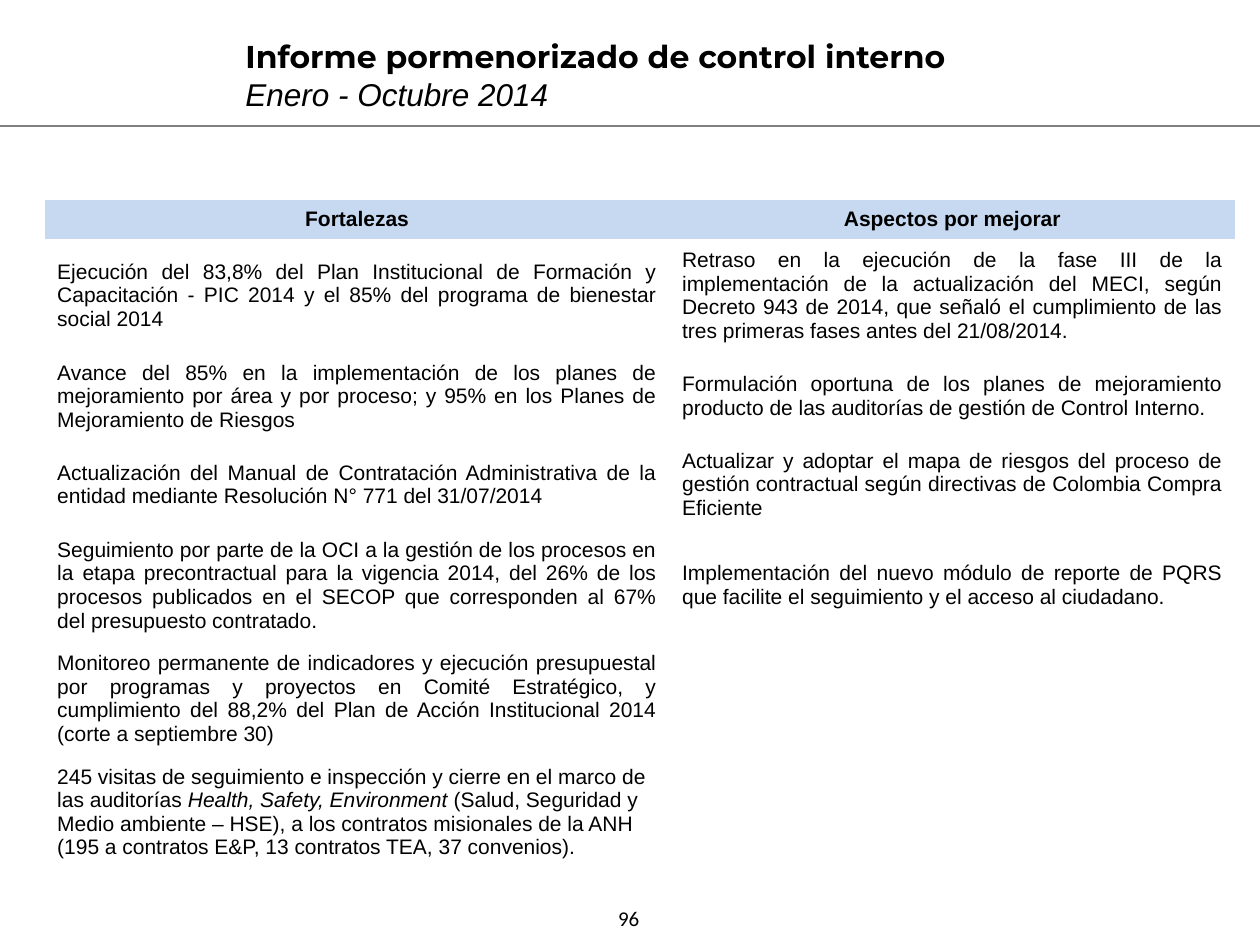
import pptx
import pptx.util
import pptx.dml.color
import pptx.enum.shapes
import pptx.enum.text
import pptx.oxml.ns
import lxml.etree

Pt = pptx.util.Pt
Align = pptx.enum.text.PP_ALIGN
Anchor = pptx.enum.text.MSO_ANCHOR

COLORS = {"text": "000000", "header": "C6D9F1", "rule": "808080"}
NO_GRID_STYLE = "{2D5ABB26-0587-4C30-8999-92F81FD0307C}"

HEADERS = ["Fortalezas", "Aspectos por mejorar"]
STRENGTHS = [
    "Ejecución del 83,8% del Plan Institucional de Formación y Capacitación - PIC 2014 y el 85% del programa de bienestar social 2014",
    "Avance del 85% en la implementación de los planes de mejoramiento por área y por proceso; y 95% en los Planes de Mejoramiento de Riesgos",
    "Actualización del Manual de Contratación Administrativa de la entidad mediante Resolución N° 771 del 31/07/2014",
    "Seguimiento por parte de la OCI a la gestión de los procesos en la etapa precontractual para la vigencia 2014, del 26% de los procesos publicados en el SECOP que corresponden al 67% del presupuesto contratado.",
    "Monitoreo permanente de indicadores y ejecución presupuestal por programas y proyectos en Comité Estratégico, y cumplimiento del 88,2% del Plan de Acción Institucional 2014 (corte a septiembre 30)",
]
IMPROVEMENTS = [
    "Retraso en la ejecución de la fase III de la implementación de la actualización del MECI, según Decreto 943 de 2014, que señaló el cumplimiento de las tres primeras fases antes del 21/08/2014.",
    "Formulación oportuna de los planes de mejoramiento producto de las auditorías de gestión de Control Interno.",
    "Actualizar y adoptar el mapa de riesgos del proceso de gestión contractual según directivas de Colombia Compra Eficiente",
    "Implementación del nuevo módulo de reporte de PQRS que facilite el seguimiento y el acceso al ciudadano.",
]
VISITS = [
    ("245 visitas de seguimiento e inspección y cierre en el marco de las auditorías ", False),
    ("Health, Safety, Environment ", True),
    ("(Salud, Seguridad y Medio ambiente – HSE), a los contratos misionales de la ANH (195 a contratos E&P, 13 contratos TEA, 37 convenios).", False),
]
COLUMN_WIDTHS = [357.1, 323.3]
ROW_HEIGHTS = [22.4, 64.8, 50.4, 50.4, 64.8, 64.8, 64.8]


def color(name):
    return pptx.dml.color.RGBColor.from_string(COLORS[name])


def write(para, text, font="Arial", size=12, bold=False, italic=False, align=Align.LEFT):
    para.alignment = align
    span = para.add_run()
    span.text = text
    span.font.name = font
    span.font.size = Pt(size)
    span.font.bold = bold
    span.font.italic = italic
    span.font.color.rgb = color("text")


def add_text_box(page, left, top, width, height):
    box = page.shapes.add_textbox(Pt(left), Pt(top), Pt(width), Pt(height))
    box.text_frame.word_wrap = True
    box.text_frame.vertical_anchor = Anchor.MIDDLE
    return box.text_frame


def add_title(page, left, top, width, height):
    frame = add_text_box(page, left, top, width, height)
    write(frame.paragraphs[0], "Informe pormenorizado de control interno",
          font="Montserrat", size=18, bold=True)
    write(frame.add_paragraph(), "Enero - Octubre 2014", size=18, italic=True)


def add_rule(page, left, top, width):
    rule = page.shapes.add_connector(
        pptx.enum.shapes.MSO_CONNECTOR.STRAIGHT, Pt(left), Pt(top), Pt(left + width), Pt(top))
    rule.line.color.rgb = color("rule")
    rule.line.width = Pt(0.75)
    lxml.etree.SubElement(rule.element.spPr, pptx.oxml.ns.qn("a:effectLst"))


def add_page_number(page, left, top, width, height):
    frame = add_text_box(page, left, top, width, height)
    write(frame.paragraphs[0], "96", font="Calibri", align=Align.CENTER)


def add_findings(page, left, top, width, height):
    table = page.shapes.add_table(len(ROW_HEIGHTS), len(COLUMN_WIDTHS),
                                  Pt(left), Pt(top), Pt(width), Pt(height)).table
    table.first_row = False
    table.horz_banding = False
    table._tbl.tblPr.find(pptx.oxml.ns.qn("a:tableStyleId")).text = NO_GRID_STYLE
    for column, column_width in zip(table.columns, COLUMN_WIDTHS):
        column.width = Pt(column_width)
    for row, row_height in zip(table.rows, ROW_HEIGHTS):
        row.height = Pt(row_height)
    for cell in table.iter_cells():
        cell.vertical_anchor = Anchor.MIDDLE
        cell.fill.background()
        cell.text_frame.paragraphs[0].font.size = Pt(12)

    for index, (header, findings) in enumerate(zip(HEADERS, [STRENGTHS, IMPROVEMENTS])):
        cell = table.cell(0, index)
        cell.fill.solid()
        cell.fill.fore_color.rgb = color("header")
        write(cell.text_frame.paragraphs[0], header, bold=True, align=Align.CENTER)
        for row_index, finding in enumerate(findings, start=1):
            para = table.cell(row_index, index).text_frame.paragraphs[0]
            write(para, finding, align=Align.JUSTIFY)

    visits_para = table.cell(len(STRENGTHS) + 1, 0).text_frame.paragraphs[0]
    for text, italic in VISITS:
        write(visits_para, text, italic=italic)


def main():
    deck = pptx.Presentation()
    deck.slide_width = Pt(720)
    deck.slide_height = Pt(540)
    page = deck.slides.add_slide(deck.slide_layouts[6])
    add_rule(page, 0, 72, 720)
    add_page_number(page, 340.5, 509, 37.5, 31.7)
    add_title(page, 133.2, 17.3, 460.8, 51)
    add_findings(page, 25.5, 114, sum(COLUMN_WIDTHS), sum(ROW_HEIGHTS))
    deck.save("out.pptx")


if __name__ == "__main__":
    main()
